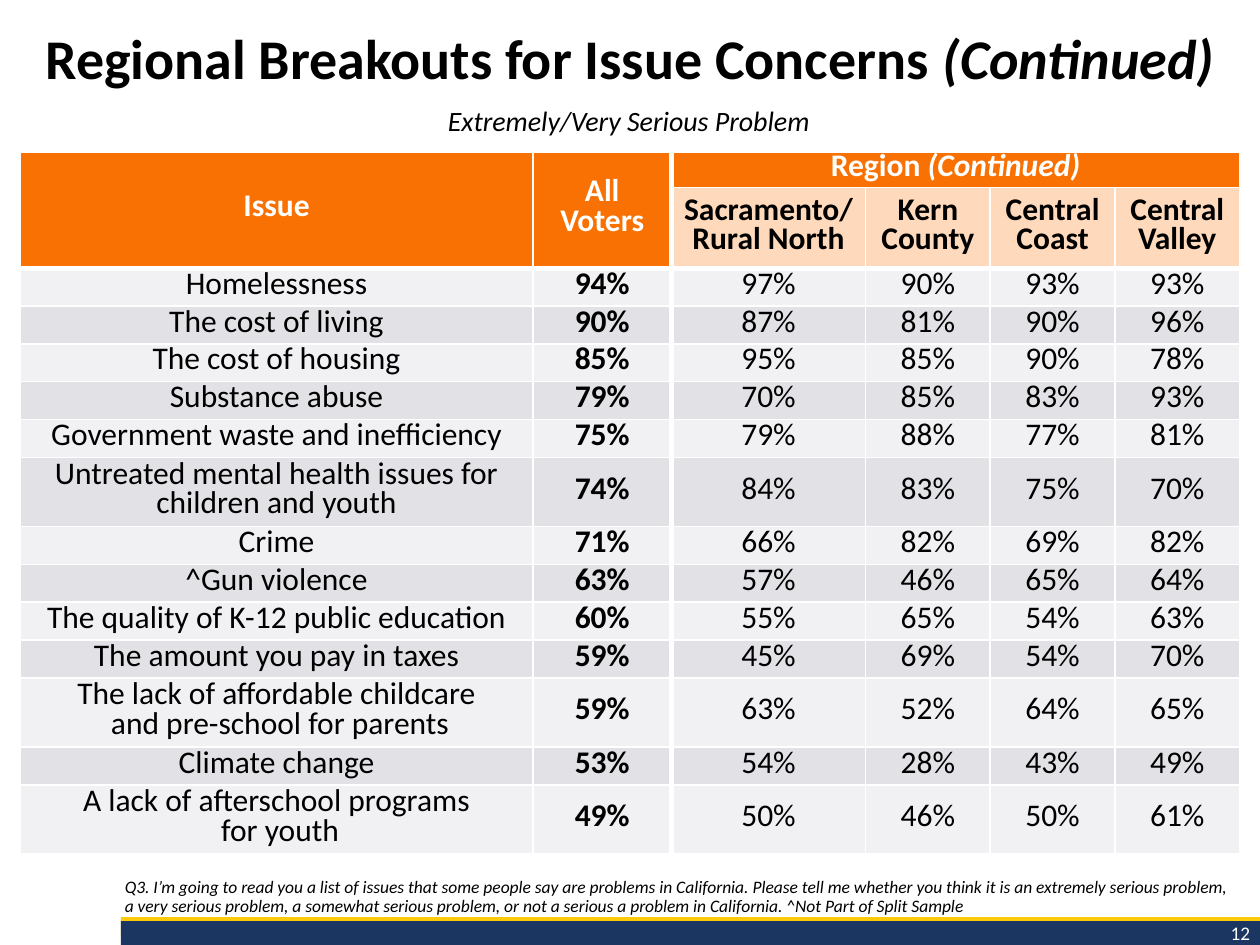
from lxml.etree import SubElement
from pptx import Presentation
from pptx.dml.color import RGBColor
from pptx.enum.shapes import MSO_SHAPE
from pptx.enum.text import MSO_ANCHOR, MSO_AUTO_SIZE, PP_ALIGN
from pptx.oxml.ns import qn
from pptx.util import Inches, Pt

BLACK = RGBColor(0x00, 0x00, 0x00)
WHITE = RGBColor(0xFF, 0xFF, 0xFF)
ORANGE = RGBColor(0xF9, 0x71, 0x03)
PEACH = RGBColor(0xFE, 0xD9, 0xBB)
LIGHT_GRAY = RGBColor(0xF1, 0xF1, 0xF3)
DARK_GRAY = RGBColor(0xE2, 0xE2, 0xE6)
GOLD = RGBColor(0xFC, 0xCA, 0x09)
NAVY = RGBColor(0x1B, 0x36, 0x61)

FONT = "Calibri"
HEADER_ROWS = 2
REGION_COLUMN = 2
THIN, THICK = 1, 3
COLUMN_WIDTHS = [4.07, 1.1, 1.54, 0.99, 0.99, 0.99]
HEADER_HEIGHTS = [0.28, 0.64]
ROW_HEIGHT, TALL_ROW_HEIGHT = 0.3, 0.55
TALL_ISSUES = ("Untreated", "The lack", "A lack")

HEADERS = [
    ["Issue", "All Voters", "Region ", "", "", ""],
    ["", "", "Sacramento/ Rural North", "Kern County", "Central Coast", "Central Valley"],
]
ISSUES = [
    ("Homelessness", 94, 97, 90, 93, 93),
    ("The cost of living", 90, 87, 81, 90, 96),
    ("The cost of housing", 85, 95, 85, 90, 78),
    ("Substance abuse", 79, 70, 85, 83, 93),
    ("Government waste and inefficiency", 75, 79, 88, 77, 81),
    ("Untreated mental health issues for children and youth", 74, 84, 83, 75, 70),
    ("Crime", 71, 66, 82, 69, 82),
    ("^Gun violence", 63, 57, 46, 65, 64),
    ("The quality of K-12 public education", 60, 55, 65, 54, 63),
    ("The amount you pay in taxes", 59, 45, 69, 54, 70),
    ("The lack of affordable childcare\v and pre-school for parents", 59, 63, 52, 64, 65),
    ("Climate change", 53, 54, 28, 43, 49),
    ("A lack of afterschool programs\v for youth", 49, 50, 46, 50, 61),
]
QUESTION = (
    "Q3. I’m going to read you a list of issues that some people say are problems in "
    "California. Please tell me whether you think it is an extremely serious problem,\v"
    "a very serious problem, a somewhat serious problem, or not a serious a problem in "
    "California. ^Not Part of Split Sample"
)


def place(shape, left, top, width, height):
    """Move and size a shape, in inches."""
    shape.left, shape.top = Inches(left), Inches(top)
    shape.width, shape.height = Inches(width), Inches(height)


def format_paragraph(paragraph, size, color=BLACK, bold=False, italic=None, align=PP_ALIGN.CENTER):
    """Set the alignment and font of a paragraph."""
    paragraph.alignment = align
    font = paragraph.font
    font.name, font.size, font.bold, font.italic = FONT, Pt(size), bold, italic
    font.color.rgb = color


def add_italic_run(paragraph, text):
    """Append an italic run to a paragraph."""
    run = paragraph.add_run()
    run.text = text
    run.font.italic = True


def add_bar(slide, top, height, color):
    """Draw one footer bar reaching the right edge."""
    bar = slide.shapes.add_shape(
        MSO_SHAPE.RECTANGLE, Inches(0.96), Inches(top), Inches(9.04), Inches(height))
    bar.shadow.inherit = False
    bar.fill.solid()
    bar.fill.fore_color.rgb = color
    bar.line.fill.background()


def add_text(slide, text, box, size, **style):
    """Add a one-line text box."""
    text_box = slide.shapes.add_textbox(*map(Inches, box))
    text_box.text_frame.word_wrap = True
    paragraph = text_box.text_frame.paragraphs[0]
    paragraph.text = text
    format_paragraph(paragraph, size, **style)


def fill_title(title):
    """Place and write the slide title."""
    place(title, 0, 0.2, 10, 1.22)
    frame = title.text_frame
    frame.auto_size = MSO_AUTO_SIZE.NONE
    frame.vertical_anchor = MSO_ANCHOR.TOP
    paragraph = frame.paragraphs[0]
    paragraph.text = "Regional Breakouts for Issue Concerns "
    paragraph.line_spacing = 0.9
    format_paragraph(paragraph, 32, bold=True)
    add_italic_run(paragraph, "(Continued)")


def fill_question(body):
    """Place and write the survey question without a bullet."""
    place(body, 0.89, 6.78, 9.09, 0.54)
    frame = body.text_frame
    frame.auto_size = MSO_AUTO_SIZE.NONE
    frame.vertical_anchor = MSO_ANCHOR.BOTTOM
    paragraph = frame.paragraphs[0]
    paragraph.text = QUESTION
    paragraph.line_spacing = 0.9
    paragraph.space_before = Pt(0)
    properties = paragraph._p.get_or_add_pPr()
    properties.set("marL", "0")
    properties.set("indent", "0")
    SubElement(properties, qn("a:buNone"))
    format_paragraph(paragraph, 10, italic=True, align=PP_ALIGN.LEFT)


def set_borders(cell, widths):
    """Draw white borders, given a width in points for each side."""
    properties = cell._tc.get_or_add_tcPr()
    for side in "LRTB":
        line = SubElement(properties, qn(f"a:ln{side}"), w=str(Pt(widths.get(side, THIN))))
        fill = SubElement(line, qn("a:solidFill"))
        SubElement(fill, qn("a:srgbClr"), val=str(WHITE))


def border_widths(row, column):
    """Thicken the lines below the header and left of the regions."""
    widths = {}
    if column == REGION_COLUMN - 1:
        widths["R"] = THICK
    if column == REGION_COLUMN:
        widths["L"] = THICK
    if row == HEADER_ROWS - 1 or (row == 0 and column < REGION_COLUMN):
        widths["B"] = THICK
    if row == HEADER_ROWS and column >= REGION_COLUMN:
        widths["T"] = THICK
    return widths


def cell_style(row, column):
    """Return fill, font colour and boldness for a table position."""
    if row == 0:
        return ORANGE, WHITE, True
    if row < HEADER_ROWS:
        return PEACH, BLACK, True
    return (DARK_GRAY if row % 2 else LIGHT_GRAY), BLACK, column == 1


def fill_cell(cell, text, row, column):
    """Write and format one table cell."""
    fill, color, bold = cell_style(row, column)
    cell.vertical_anchor = MSO_ANCHOR.MIDDLE
    cell.margin_left = cell.margin_right = Inches(0.01 if row else 0.1)
    cell.margin_top = Inches(0.01 if row else 0)
    cell.margin_bottom = 0
    paragraph = cell.text_frame.paragraphs[0]
    paragraph.text = text
    paragraph.line_spacing = Pt(17)
    format_paragraph(paragraph, 18, color, bold)
    if not cell.is_spanned:
        set_borders(cell, border_widths(row, column))
    cell.fill.solid()
    cell.fill.fore_color.rgb = fill


def add_issue_table(slide):
    """Add the table of issue concerns by region."""
    rows = HEADERS + [[issue, *(f"{share}%" for share in shares)] for issue, *shares in ISSUES]
    heights = HEADER_HEIGHTS + [
        TALL_ROW_HEIGHT if issue.startswith(TALL_ISSUES) else ROW_HEIGHT for issue, *_ in ISSUES]
    table = slide.shapes.add_table(
        len(rows), len(COLUMN_WIDTHS), Inches(0.16), Inches(1.21),
        Inches(sum(COLUMN_WIDTHS)), Inches(sum(heights))).table
    table.first_row = table.horz_banding = False
    for column, width in zip(table.columns, COLUMN_WIDTHS):
        column.width = Inches(width)
    for row, height in zip(table.rows, heights):
        row.height = Inches(height)
    for column in range(REGION_COLUMN):
        table.cell(0, column).merge(table.cell(HEADER_ROWS - 1, column))
    region = table.cell(0, REGION_COLUMN)
    region.merge(table.cell(0, len(COLUMN_WIDTHS) - 1))
    for row, texts in enumerate(rows):
        for column, text in enumerate(texts):
            fill_cell(table.cell(row, column), text, row, column)
    add_italic_run(region.text_frame.paragraphs[0], "(Continued)")


def main():
    """Build the slide and save it."""
    presentation = Presentation()
    presentation.slide_width, presentation.slide_height = Inches(10), Inches(7.5)
    slide = presentation.slides.add_slide(presentation.slide_layouts[1])
    add_bar(slide, 7.28, 0.16, GOLD)
    add_bar(slide, 7.31, 0.19, NAVY)
    add_text(slide, "12", (8.54, 7.26, 1.48, 0.29), 11, color=WHITE, align=PP_ALIGN.RIGHT)
    fill_question(slide.placeholders[1])
    add_issue_table(slide)
    add_text(slide, "Extremely/Very Serious Problem", (0, 0.77, 9.98, 0.37), 16, italic=True)
    fill_title(slide.shapes.title)
    presentation.save("out.pptx")


if __name__ == "__main__":
    main()
